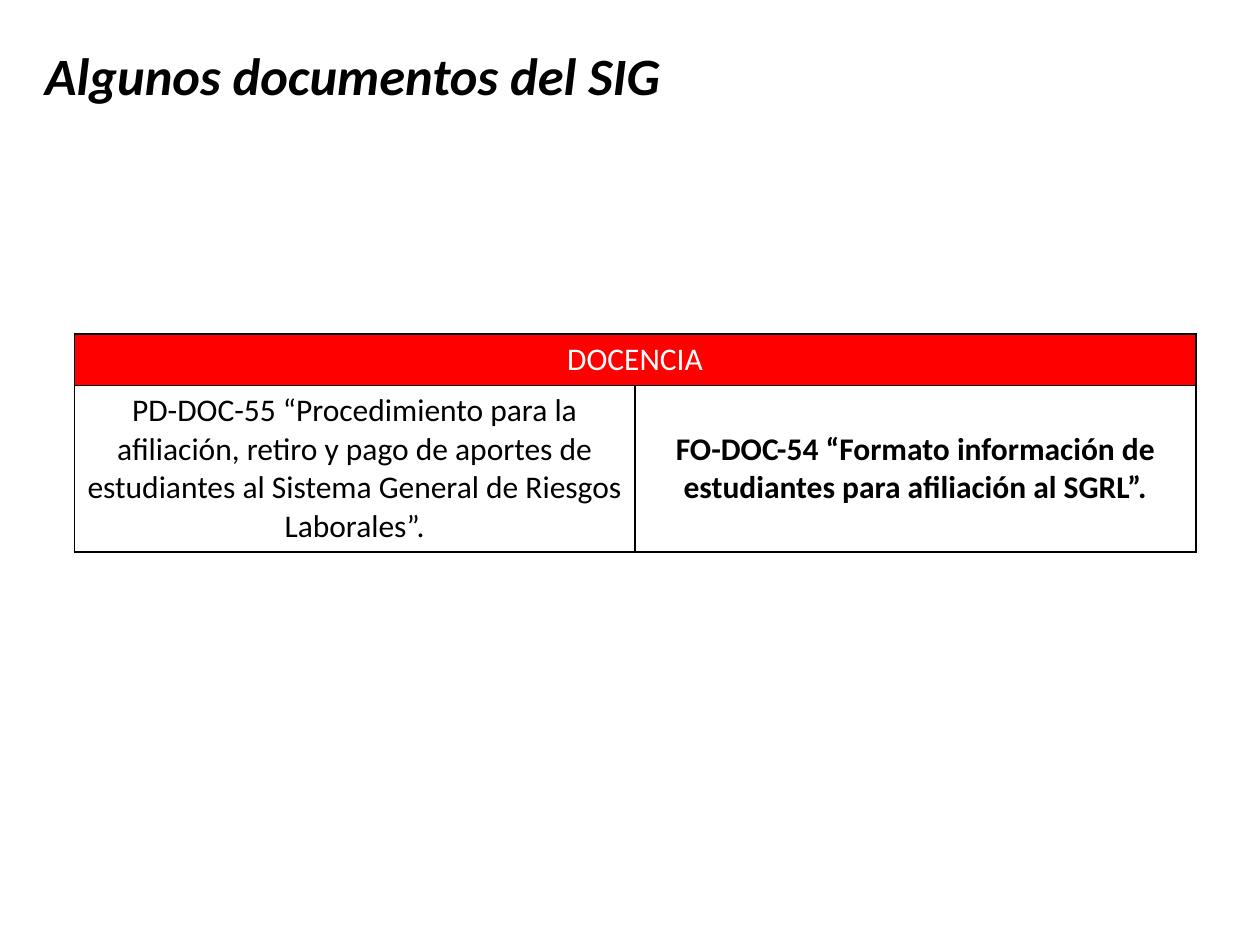
"""Build the slide that lists teaching documents of the SIG."""
from lxml.etree import SubElement
from pptx import Presentation
from pptx.dml.color import RGBColor
from pptx.enum.text import MSO_ANCHOR as Anchor, PP_ALIGN as Align
from pptx.oxml.ns import qn
from pptx.util import Inches, Pt

COLORS = {"ink": "000000", "paper": "FFFFFF", "header": "FF0000"}
FONT = "Calibri"


def write(frame, text, size, color, bold=False, italic=False):
    frame.text = text
    paragraph = frame.paragraphs[0]
    paragraph.alignment = Align.CENTER
    font = paragraph.runs[0].font
    font.name, font.size = FONT, Pt(size)
    font.bold, font.italic = bold, italic
    font.color.rgb = RGBColor.from_string(COLORS[color])


def add_borders(cell):
    properties = cell._tc.get_or_add_tcPr()
    for side in ("lnL", "lnR", "lnT", "lnB"):
        line = SubElement(properties, qn(f"a:{side}"), w=str(Pt(1)))
        fill = SubElement(line, qn("a:solidFill"))
        SubElement(fill, qn("a:srgbClr"), val=COLORS["ink"])


deck = Presentation()
deck.slide_width, deck.slide_height = Inches(10), Inches(7.5)
slide = deck.slides.add_slide(deck.slide_layouts[5])

heading = slide.shapes.title
heading.left, heading.top = Inches(0.2), Inches(0.29)
heading.width, heading.height = Inches(5.2), Inches(0.61)
heading.text_frame.word_wrap = True
heading.text_frame.vertical_anchor = Anchor.TOP
write(heading.text_frame, "Algunos documentos del SIG", 30, "ink", bold=True, italic=True)

row_heights = (0.41, 1.3)
documents = slide.shapes.add_table(
    2, 2, Inches(0.59), Inches(2.65), Inches(8.9), Inches(sum(row_heights))
).table
for row, height in zip(documents.rows, row_heights):
    row.height = Inches(height)
for cell in documents.iter_cells():
    add_borders(cell)
    cell.fill.background()

area = documents.cell(0, 0)
area.merge(documents.cell(0, 1))
area.fill.solid()
area.fill.fore_color.rgb = RGBColor.from_string(COLORS["header"])
write(area.text_frame, "DOCENCIA", 18, "paper")

entries = (
    ("PD-DOC-55 “Procedimiento para la afiliación, retiro y pago de aportes de "
     "estudiantes al Sistema General de Riesgos Laborales”.", False),
    ("FO-DOC-54 “Formato información de estudiantes para afiliación al SGRL”.", True),
)
for column, (entry, bold) in enumerate(entries):
    cell = documents.cell(1, column)
    cell.vertical_anchor = Anchor.MIDDLE
    write(cell.text_frame, entry, 18, "ink", bold=bold)

deck.save("out.pptx")
